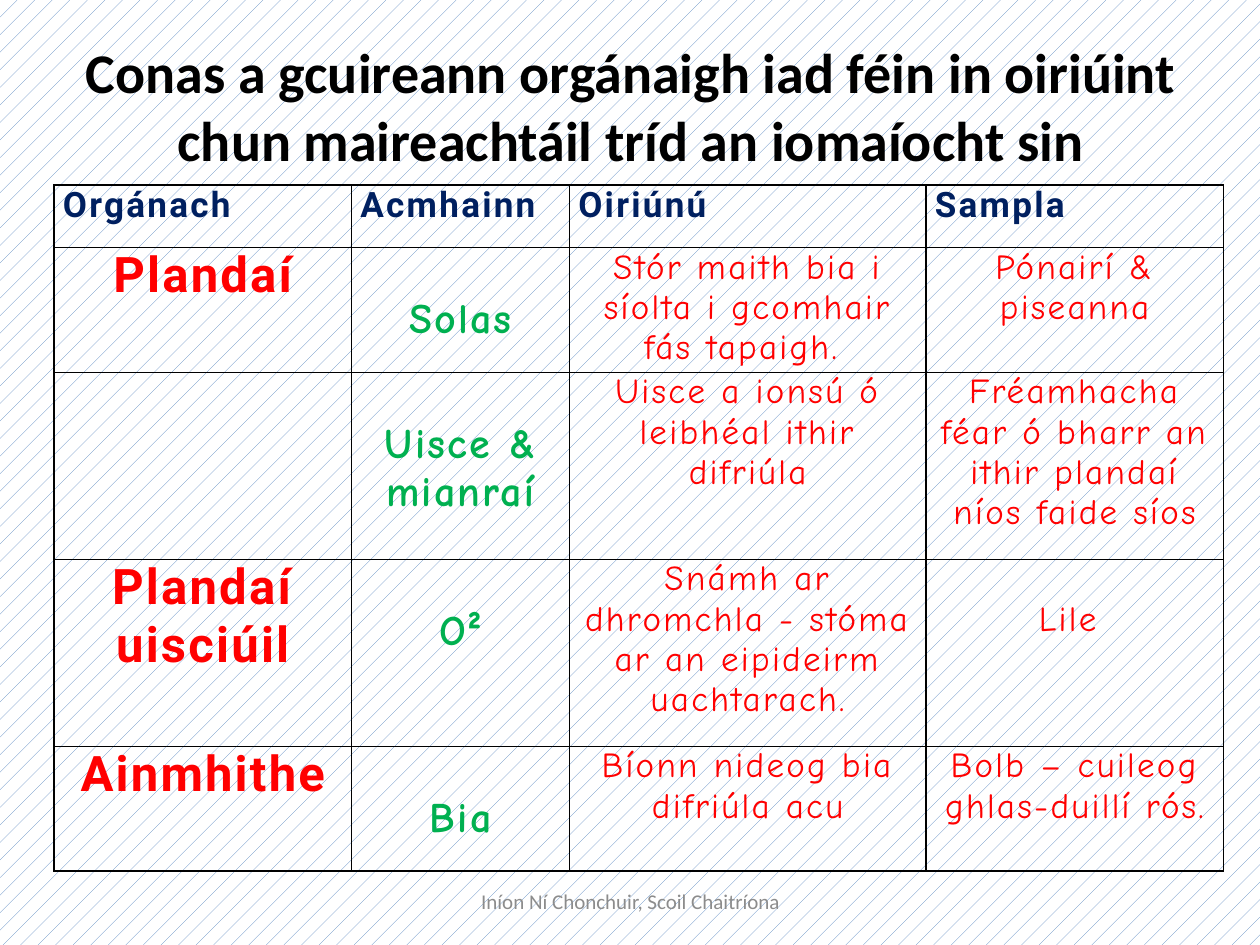
from dataclasses import dataclass

from lxml import etree
from pptx import Presentation
from pptx.dml.color import RGBColor
from pptx.enum.dml import MSO_PATTERN
from pptx.enum.text import MSO_ANCHOR, PP_ALIGN
from pptx.oxml.ns import qn
from pptx.util import Inches, Pt

CENTER, LEFT = PP_ALIGN.CENTER, PP_ALIGN.LEFT
MIDDLE = MSO_ANCHOR.MIDDLE
DOTS = MSO_PATTERN.PERCENT_5
TITLE_ONLY = 5


@dataclass(frozen=True)
class Style:
    size: float
    font: str
    color: str
    bold: bool = False
    spacing: float = 0
    align: int = CENTER


class Theme:
    paper, pattern, border = "FFFFFF", "4F81BD", "000000"
    border_width = 1
    line_height = 1.15
    title = Style(32, "Calibri", "000000", True)
    footer = Style(12, "Calibri", "8C8C8C")
    header = Style(20, "Roboto", "002060", True, 1.3, LEFT)
    organism = Style(28, "Roboto", "FF0000", True, 1.3)
    resource = Style(24, "Comic Neue", "00B050", True, 1.3)
    detail = Style(20, "Comic Neue", "FF0000", False, 1.3)


# Table grid: column widths and row heights in inches
COLUMNS = [2.36, 1.73, 2.83, 2.36]
ROW_UNIT = 0.495
ROW_UNITS = [1, 2, 3, 3, 2]
TABLE_LEFT, TABLE_TOP = 0.43, 1.47

HEADERS = ["Orgánach", "Acmhainn", "Oiriúnú", "Sampla"]
ROWS = [
    ["Plandaí", "Solas", "Stór maith bia i síolta i gcomhair fás tapaigh. ",
     "Pónairí & piseanna"],
    ["", "Uisce &\nmianraí", "Uisce a ionsú ó leibhéal ithir difriúla",
     "Fréamhacha féar ó bharr an ithir plandaí níos faide síos"],
    ["Plandaí uisciúil", "O²",
     "Snámh ar dhromchla - stóma ar an eipideirm uachtarach.", "Lile "],
    ["Ainmhithe", "Bia", "Bíonn nideog bia difriúla acu",
     "Bolb – cuileog ghlas-duillí rós."],
]
COLUMN_STYLES = [Theme.organism, Theme.resource, Theme.detail, Theme.detail]
LOWERED = {"Lile "}  # details that start one line down, like the resources


def write(frame, text, style):
    """Fill a text frame, one paragraph per line of text."""
    for index, line in enumerate(text.split("\n")):
        para = frame.add_paragraph() if index else frame.paragraphs[0]
        para.alignment = style.align
        span = para.add_run()
        span.text = line
        font = span.font
        font.size, font.name, font.bold = Pt(style.size), style.font, style.bold
        font.color.rgb = RGBColor.from_string(style.color)
        if style.spacing:
            span._r.get_or_add_rPr().set("spc", str(round(style.spacing * 100)))


def add_borders(cell):
    properties = cell._tc.get_or_add_tcPr()
    for side in ("a:lnL", "a:lnR", "a:lnT", "a:lnB"):
        line = etree.SubElement(properties, qn(side), w=str(Pt(Theme.border_width)))
        fill = etree.SubElement(line, qn("a:solidFill"))
        etree.SubElement(fill, qn("a:srgbClr"), val=Theme.border)


def format_cell(cell, text, style, lowered):
    add_borders(cell)
    cell.fill.background()
    cell.margin_left = cell.margin_right = Inches(0.07)
    cell.margin_bottom = 0
    cell.margin_top = Pt(style.size * Theme.line_height) if lowered else 0
    if text:
        write(cell.text_frame, text, style)


def set_background(page):
    fill = page.background.fill
    fill.patterned()
    fill.pattern = DOTS
    fill.fore_color.rgb = RGBColor.from_string(Theme.pattern)
    fill.back_color.rgb = RGBColor.from_string(Theme.paper)


def set_title(page, text):
    title = page.shapes.title
    title.left, title.top = Inches(0.51), Inches(0.21)
    title.width, title.height = Inches(9), Inches(1.25)
    title.text_frame.vertical_anchor = MIDDLE
    write(title.text_frame, text, Theme.title)


def add_adaptation_table(page):
    table = page.shapes.add_table(
        len(ROW_UNITS), len(COLUMNS), Inches(TABLE_LEFT), Inches(TABLE_TOP),
        Inches(sum(COLUMNS)), Inches(ROW_UNIT * sum(ROW_UNITS))).table
    table.first_row = table.horz_banding = False
    for column, width in zip(table.columns, COLUMNS):
        column.width = Inches(width)
    for row, units in zip(table.rows, ROW_UNITS):
        row.height = Inches(ROW_UNIT * units)
    for row_index, texts in enumerate([HEADERS] + ROWS):
        for column_index, text in enumerate(texts):
            style = COLUMN_STYLES[column_index] if row_index else Theme.header
            lowered = style is Theme.resource or text in LOWERED
            format_cell(table.cell(row_index, column_index), text, style, lowered)


def add_footer(page, text):
    box = page.shapes.add_textbox(Inches(3.42), Inches(6.95), Inches(3.17), Inches(0.4))
    box.text_frame.word_wrap = True
    box.text_frame.vertical_anchor = MIDDLE
    write(box.text_frame, text, Theme.footer)


def main():
    deck = Presentation()
    deck.slide_width, deck.slide_height = Inches(10), Inches(7.5)
    page = deck.slides.add_slide(deck.slide_layouts[TITLE_ONLY])
    set_background(page)
    set_title(page, "Conas a gcuireann orgánaigh iad féin in oiriúint "
                    "chun maireachtáil tríd an iomaíocht sin")
    add_adaptation_table(page)
    add_footer(page, "Iníon Ní Chonchuir, Scoil Chaitríona")
    deck.save("out.pptx")


if __name__ == "__main__":
    main()
